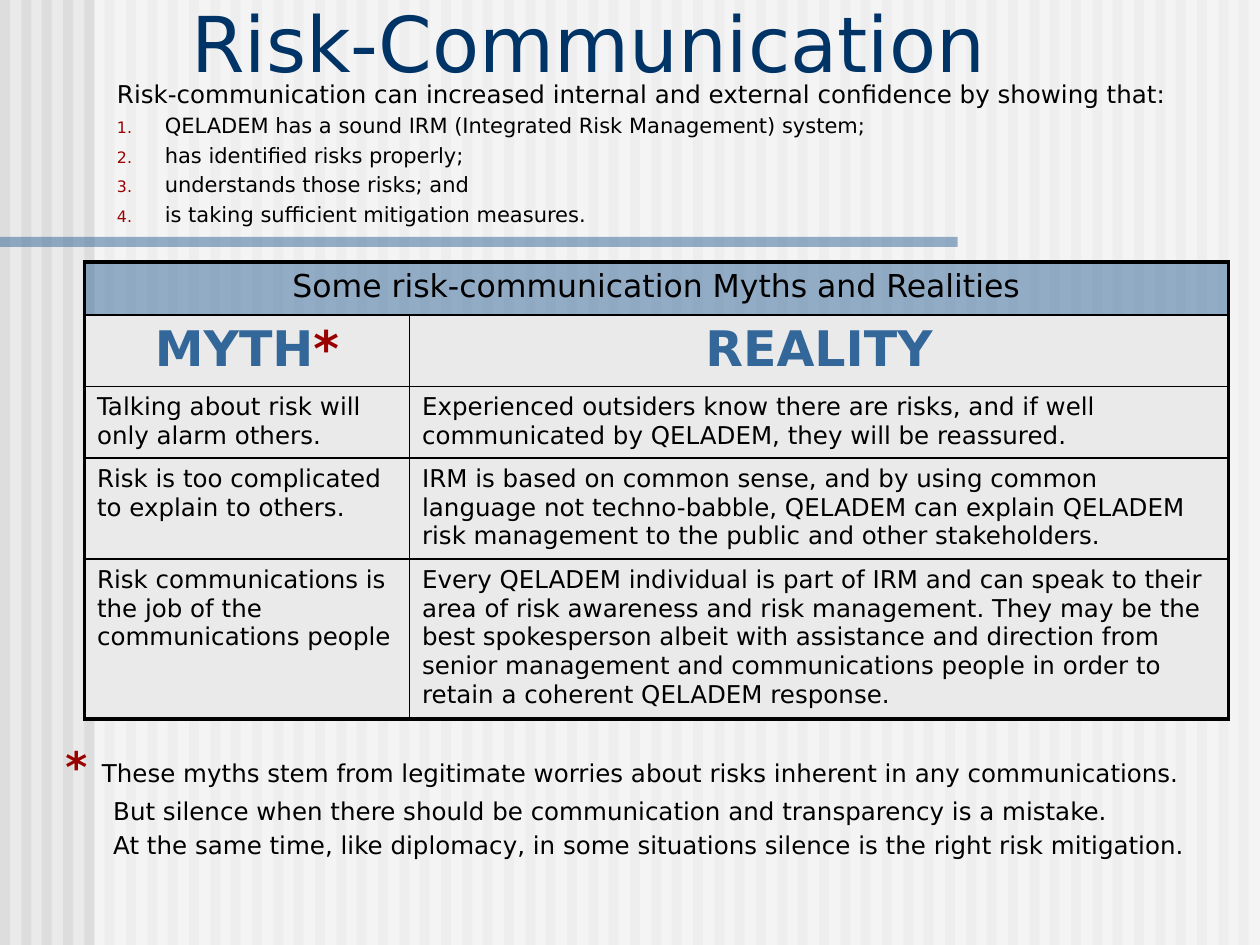
import dataclasses

import lxml.etree
import pptx
import pptx.dml.color
import pptx.enum.shapes
import pptx.enum.text
import pptx.oxml.ns
import pptx.util

Inches = pptx.util.Inches
Pt = pptx.util.Pt
qn = pptx.oxml.ns.qn
Align = pptx.enum.text.PP_ALIGN
Anchor = pptx.enum.text.MSO_ANCHOR


@dataclasses.dataclass(frozen=True)
class Theme:
    font: str = "DejaVu Sans"
    paper: str = "EAEAEA"
    stripe: str = "DDDDDD"
    veil: str = "FFFFFF"
    accent: str = "336699"
    title_ink: str = "003366"
    ink: str = "000000"
    mark: str = "9A0000"
    title: float = 44
    heading: float = 28
    star: float = 24
    banner: float = 18
    text: float = 14
    item: float = 12
    gap: float = 0.2
    thin: float = 1
    thick: float = 2.25


class RiskPage:
    """Holds the theme and the current slide, and adds elements to it."""

    def __init__(self, deck, theme):
        self.theme = theme
        self.page = deck.slides.add_slide(deck.slide_layouts[5])
        self.paint(self.page.background.fill, theme.paper)

    def paint(self, fill, color):
        fill.solid()
        fill.fore_color.rgb = pptx.dml.color.RGBColor.from_string(color)

    def fade(self, properties, percent):
        color = properties.find(qn("a:solidFill")).find(qn("a:srgbClr"))
        lxml.etree.SubElement(color, qn("a:alpha"), val=str(percent * 1000))

    def span(self, para, text, size, color=None, bold=False):
        span = para.add_run()
        span.text = text
        span.font.name = self.theme.font
        span.font.size = Pt(size)
        span.font.bold = bold
        self.paint(span.font.fill, color or self.theme.ink)

    def para(self, frame, spans, align=Align.LEFT, left=0, first=0, numbered=False):
        para = frame.paragraphs[0]
        if para.runs:
            para = frame.add_paragraph()
        para.alignment = align
        para.space_before = Pt(round(spans[-1][1] * self.theme.gap, 1))
        for details in spans:
            self.span(para, *details)
        properties = para._p.get_or_add_pPr()
        properties.set("marL", str(Inches(left)))
        properties.set("indent", str(Inches(first)))
        if numbered:
            color = lxml.etree.SubElement(properties, qn("a:buClr"))
            lxml.etree.SubElement(color, qn("a:srgbClr"), val=self.theme.mark)
            lxml.etree.SubElement(properties, qn("a:buSzPct"), val="75000")
            lxml.etree.SubElement(properties, qn("a:buAutoNum"), type="arabicPeriod")

    def block(self, left, top, width, height, color, opacity=100):
        block = self.page.shapes.add_shape(
            pptx.enum.shapes.MSO_SHAPE.RECTANGLE,
            Inches(left), Inches(top), Inches(width), Inches(height))
        block.shadow.inherit = False
        block.line.fill.background()
        self.paint(block.fill, color)
        if opacity < 100:
            self.fade(block.element.spPr, opacity)

    def title(self, text, left, top, width, height):
        title = self.page.shapes.title
        title.left, title.top = Inches(left), Inches(top)
        title.width, title.height = Inches(width), Inches(height)
        frame = title.text_frame
        frame.auto_size = pptx.enum.text.MSO_AUTO_SIZE.NONE
        frame.vertical_anchor = Anchor.BOTTOM
        frame.paragraphs[0].alignment = Align.LEFT
        self.span(frame.paragraphs[0], text, self.theme.title, self.theme.title_ink)
        title.element.getparent().append(title.element)

    def text(self, left, top, width, height):
        box = self.page.shapes.add_textbox(
            Inches(left), Inches(top), Inches(width), Inches(height))
        box.text_frame.word_wrap = True
        return box.text_frame

    def border(self, properties, side, width):
        line = lxml.etree.SubElement(properties, qn("a:ln" + side), w=str(Pt(width)))
        fill = lxml.etree.SubElement(line, qn("a:solidFill"))
        lxml.etree.SubElement(fill, qn("a:srgbClr"), val=self.theme.ink)

    def table(self, left, top, widths, heights, rows):
        theme = self.theme
        shape = self.page.shapes.add_table(
            len(heights), len(widths), Inches(left), Inches(top),
            Inches(sum(widths)), Inches(sum(heights)))
        table = shape.table
        table.first_row = table.horz_banding = False
        for column, width in zip(table.columns, widths):
            column.width = Inches(width)
        for row, height in zip(table.rows, heights):
            row.height = Inches(height)
        table.cell(0, 0).merge(table.cell(0, len(widths) - 1))
        last_row, last_column = len(heights) - 1, len(widths) - 1
        for r, row in enumerate(rows):
            for c, spans in enumerate(row):
                cell = table.cell(r, c)
                cell.vertical_anchor = Anchor.TOP
                properties = cell._tc.get_or_add_tcPr()
                outer = {"L": c == 0, "R": c == last_column or r == 0,
                         "T": r == 0, "B": r == last_row}
                for side, edge in outer.items():
                    self.border(properties, side, theme.thick if edge else theme.thin)
                self.paint(cell.fill, theme.paper if r else theme.accent)
                if r == 0:
                    self.fade(properties, 50)
                if spans:
                    self.para(cell.text_frame, spans, Align.CENTER if r < 2 else Align.LEFT)


def main():
    theme = Theme()
    deck = pptx.Presentation()
    deck.slide_width, deck.slide_height = Inches(10), Inches(7.5)
    page = RiskPage(deck, theme)

    for index in range(60):
        page.block(round(index / 6, 2), 0, 0.08, 7.5, theme.stripe)
    page.block(0.75, 0, 9.25, 7.5, theme.veil, 50)
    page.block(0, 1.88, 7.6, 0.08, theme.accent, 50)
    page.title("Risk-Communication", 1.42, -0.08, 8.43, 0.83)

    intro = page.text(0.83, 0.58, 9.08, 1.08)
    page.para(intro, [("Risk-communication can increased internal and external "
                       "confidence by showing that:", theme.text)])
    for item in ("QELADEM has a sound IRM (Integrated Risk Management) system;",
                 "has identified risks properly;",
                 "understands those risks; and",
                 "is taking sufficient mitigation measures."):
        page.para(intro, [(item, theme.item)], left=0.38, first=-0.38, numbered=True)

    myths = [
        ("Talking about risk will only alarm others.",
         "Experienced outsiders know there are risks, and if well communicated "
         "by QELADEM, they will be reassured."),
        ("Risk is too complicated to explain to others.",
         "IRM is based on common sense, and by using common language not "
         "techno-babble, QELADEM can explain QELADEM risk management to the "
         "public and other stakeholders."),
        ("Risk communications is the job of the communications people",
         "Every QELADEM individual is part of IRM and can speak to their area of "
         "risk awareness and risk management. They may be the best spokesperson "
         "albeit with assistance and direction from senior management and "
         "communications people in order to retain a coherent QELADEM response."),
    ]
    banner = [("Some risk-communication Myths and Realities", theme.banner)]
    headings = [[("MYTH", theme.heading, theme.accent, True),
                 ("*", theme.heading, theme.mark, True)],
                [("REALITY", theme.heading, theme.accent, True)]]
    rows = [[banner, None], headings]
    rows += [[[(text, theme.text)] for text in pair] for pair in myths]
    page.table(0.67, 2.08, [2.58, 6.5], [0.42, 0.55, 0.57, 0.78, 1.24], rows)

    footnote = page.text(0.42, 5.83, 9.58, 1.25)
    page.para(footnote, [("* ", theme.star, theme.mark, True),
                         ("These myths stem from legitimate worries about risks "
                          "inherent in any communications.", theme.text)],
              left=0.38, first=-0.38)
    for remark in ("But silence when there should be communication and "
                   "transparency is a mistake.",
                   "At the same time, like diplomacy, in some situations silence "
                   "is the right risk mitigation."):
        page.para(footnote, [(remark, theme.text)], left=0.38)

    deck.save("out.pptx")


if __name__ == "__main__":
    main()
